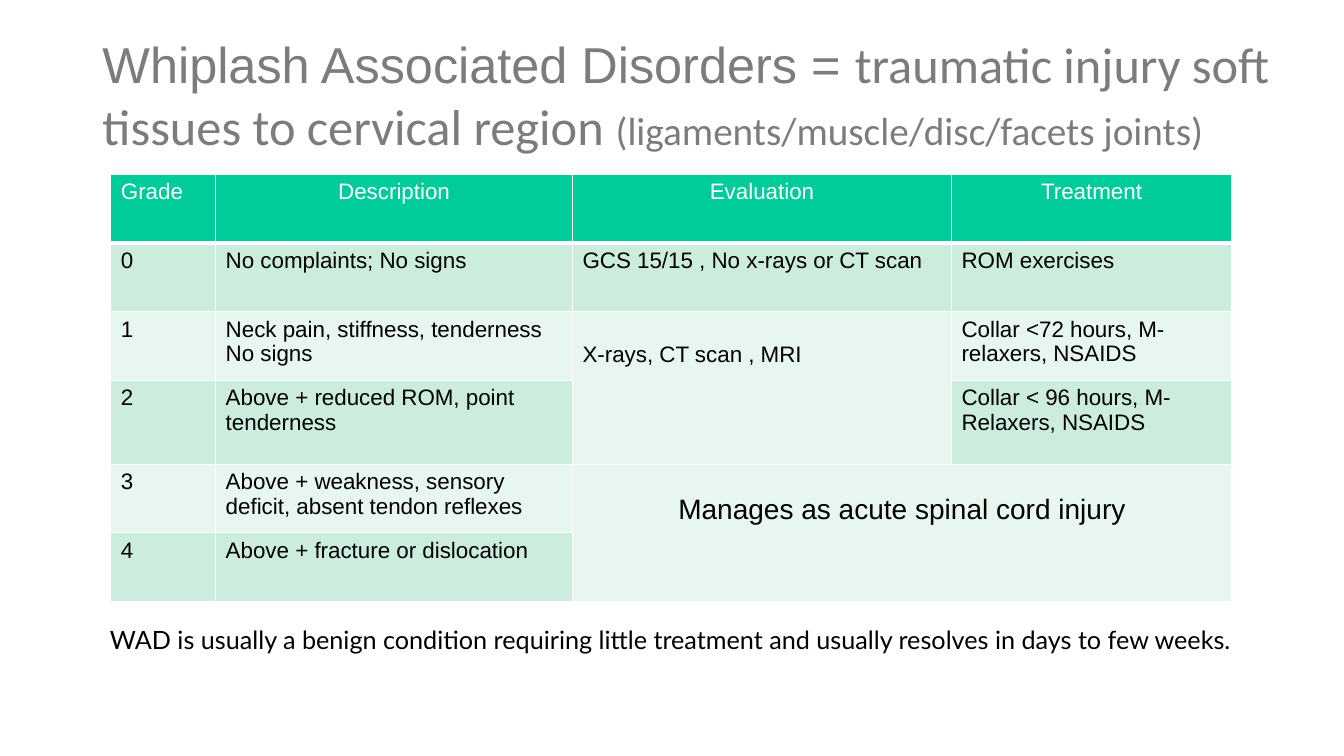
import pptx
import pptx.dml.color
import pptx.enum.text
import pptx.util
from lxml import etree

RGBColor = pptx.dml.color.RGBColor
Pt = pptx.util.Pt
Align = pptx.enum.text.PP_ALIGN

WHITE = RGBColor(0xFF, 0xFF, 0xFF)
BLACK = RGBColor(0x00, 0x00, 0x00)
GREY = RGBColor(0x7B, 0x7C, 0x7B)
GREEN = RGBColor(0x00, 0xCC, 0x99)
MINT = RGBColor(0xCC, 0xEC, 0xDE)
PALE_MINT = RGBColor(0xE7, 0xF6, 0xEF)

GRID_COLUMNS, GRID_ROWS = 160, 90
DRAWING_NS = "http://schemas.openxmlformats.org/drawingml/2006/main"

TITLE_RUNS = [
    ("Whiplash Associated Disorders = ", {"name": "Arial", "size": Pt(36)}),
    ("traumatic injury soft tissues to cervical region ",
     {"name": "Calibri", "size": Pt(36)}),
    ("(ligaments/muscle/disc/facets joints)",
     {"name": "Calibri", "size": Pt(28)}),
]
GRADES = [
    ["Grade", "Description", "Evaluation", "Treatment"],
    ["0", "No complaints; No signs", "GCS 15/15 , No x-rays or CT scan",
     "ROM exercises"],
    ["1", "Neck pain, stiffness, tenderness\nNo signs",
     "X-rays, CT scan , MRI", "Collar <72 hours, M- relaxers, NSAIDS"],
    ["2", "Above + reduced ROM, point\ntenderness", "",
     "Collar < 96 hours, M-Relaxers, NSAIDS"],
    ["3", "Above + weakness, sensory deficit, absent tendon reflexes",
     "Manages as acute spinal cord injury", ""],
    ["4", "Above + fracture or dislocation", "", ""],
]
XRAY_CELL, SPINAL_CELL = (2, 2), (4, 2)
MERGES = [(XRAY_CELL, (3, 2)), (SPINAL_CELL, (5, 3))]
COLUMN_WIDTHS = [12.48, 42.48, 45.12, 33.36]
ROW_HEIGHTS = [8.16, 8.16, 8.16, 10, 8.16, 8.16]
NOTE = ("WAD is usually a benign condition requiring little treatment "
        "and usually resolves in days to few weeks.")


def apply_format(target, values):
    for name, value in values.items():
        setattr(target, name, value)


class SlideBuilder:
    """Places elements on a slide; lengths are grid columns and rows."""

    def __init__(self, deck):
        self.column = deck.slide_width / GRID_COLUMNS
        self.row = deck.slide_height / GRID_ROWS
        self.slide = deck.slides.add_slide(deck.slide_layouts[5])

    def box(self, left, top, width, height):
        return [round(left * self.column), round(top * self.row),
                round(width * self.column), round(height * self.row)]

    def styled_run(self, paragraph, text, color, font):
        run = paragraph.add_run()
        run.text = text
        apply_format(run.font, font)
        run.font.color.rgb = color

    def title(self, runs, *place):
        title = self.slide.shapes.title
        apply_format(title, dict(zip(("left", "top", "width", "height"),
                                     self.box(*place))))
        apply_format(title.text_frame, {
            "auto_size": pptx.enum.text.MSO_AUTO_SIZE.NONE,
            "vertical_anchor": pptx.enum.text.MSO_ANCHOR.MIDDLE,
            "word_wrap": True})
        paragraph = title.text_frame.paragraphs[0]
        apply_format(paragraph, {"alignment": Align.LEFT,
                                 "line_spacing": 1.02})
        for text, font in runs:
            self.styled_run(paragraph, text, GREY, font)

    def borders(self, cell, top, bottom):
        """Draw white cell borders; they must come before the cell's fill."""
        properties = cell._tc.get_or_add_tcPr()
        for side, width in (("L", 1), ("R", 1), ("T", top), ("B", bottom)):
            line = etree.SubElement(properties, f"{{{DRAWING_NS}}}ln{side}",
                                    w=str(int(Pt(width))))
            fill = etree.SubElement(line, f"{{{DRAWING_NS}}}solidFill")
            etree.SubElement(fill, f"{{{DRAWING_NS}}}srgbClr", val=str(WHITE))

    def cell(self, cell, text, row, column):
        header = row == 0
        spinal = (row, column) == SPINAL_CELL
        self.borders(cell, top=3 if row == 1 else 1, bottom=3 if header else 1)
        cell.fill.solid()
        cell.fill.fore_color.rgb = (
            GREEN if header else MINT if row % 2 else PALE_MINT)
        if (row, column) in (XRAY_CELL, SPINAL_CELL):
            cell.margin_top = round(3.6 * self.row)
        centred = spinal or (header and column > 0)
        font = {"name": "Arial", "size": Pt(20 if spinal else 16),
                "bold": False}
        for index, line in enumerate(text.split("\n") if text else []):
            frame = cell.text_frame
            paragraph = frame.add_paragraph() if index else frame.paragraphs[0]
            paragraph.alignment = Align.CENTER if centred else Align.LEFT
            self.styled_run(paragraph, line, WHITE if header else BLACK, font)

    def table(self, rows, left, top):
        place = self.box(left, top, sum(COLUMN_WIDTHS), sum(ROW_HEIGHTS))
        table = self.slide.shapes.add_table(
            len(rows), len(rows[0]), *place).table
        apply_format(table, {"first_row": False, "horz_banding": False})
        for column, width in zip(table.columns, COLUMN_WIDTHS):
            column.width = round(width * self.column)
        for row, height in zip(table.rows, ROW_HEIGHTS):
            row.height = round(height * self.row)
        for first, last in MERGES:
            table.cell(*first).merge(table.cell(*last))
        for row, texts in enumerate(rows):
            for column, text in enumerate(texts):
                self.cell(table.cell(row, column), text, row, column)

    def note(self, text, *place):
        frame = self.slide.shapes.add_textbox(*self.box(*place)).text_frame
        apply_format(frame, {
            "word_wrap": True,
            "auto_size": pptx.enum.text.MSO_AUTO_SIZE.SHAPE_TO_FIT_TEXT})
        self.styled_run(frame.paragraphs[0], text, BLACK,
                        {"name": "Lato", "size": Pt(18)})


def main():
    deck = pptx.Presentation()
    deck.slide_width = pptx.util.Inches(13.33)
    deck.slide_height = pptx.util.Inches(7.5)
    builder = SlideBuilder(deck)
    builder.title(TITLE_RUNS, 11, 2.5, 152.7, 17.4)
    builder.table(GRADES, 13.2, 20.8)
    builder.note(NOTE, 11.9, 73.7, 140, 4.9)
    deck.save("out.pptx")


if __name__ == "__main__":
    main()
